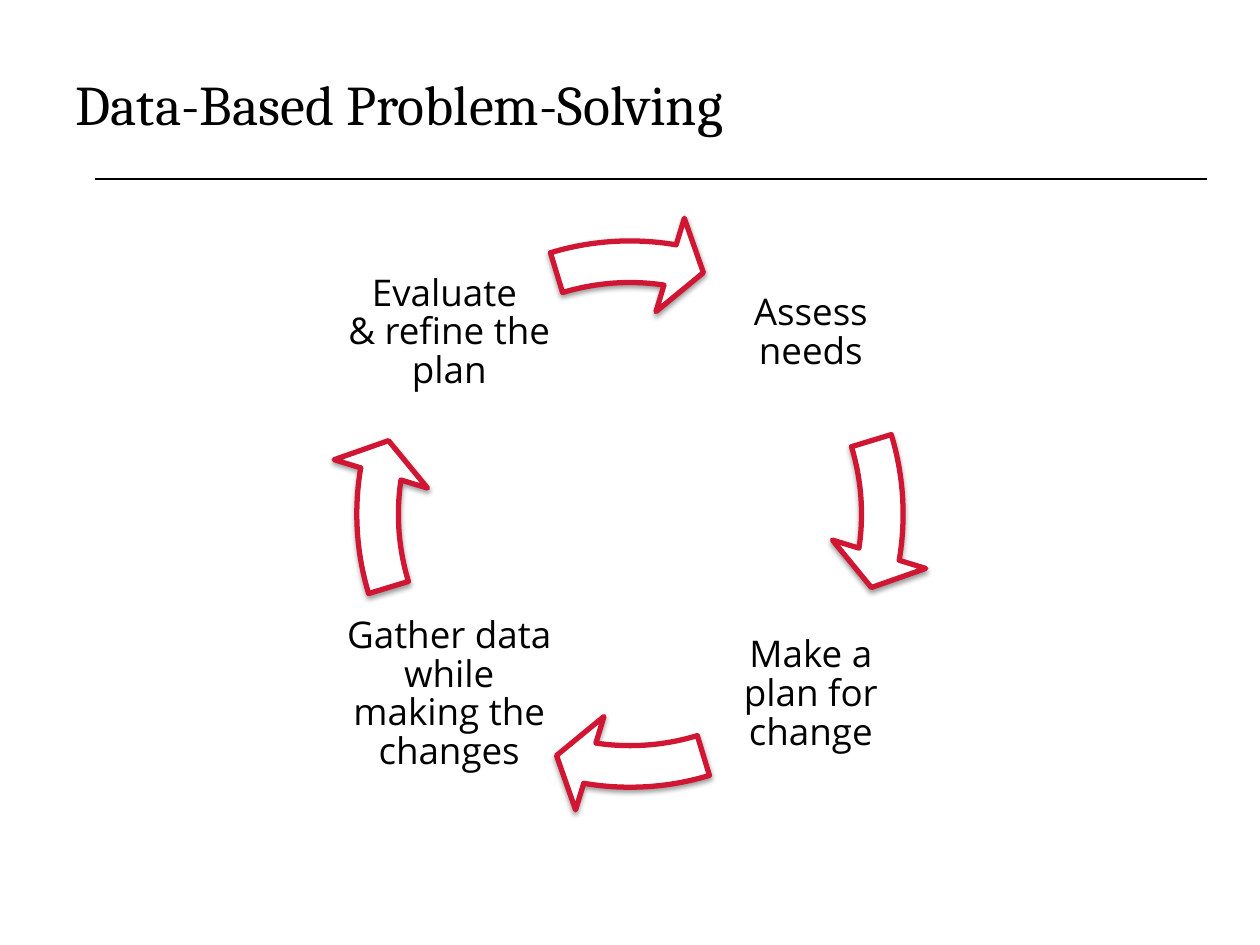
import pptx
import pptx.util
import pptx.dml.color
import pptx.enum.shapes
import pptx.enum.text
import lxml.etree
from pptx.oxml import parse_xml
from pptx.oxml.ns import nsdecls

BLACK = pptx.dml.color.RGBColor(0x00, 0x00, 0x00)
WHITE = pptx.dml.color.RGBColor(0xFF, 0xFF, 0xFF)
RED = pptx.dml.color.RGBColor(0xD0, 0x16, 0x32)
ALIGN = pptx.enum.text.PP_ALIGN
MIDDLE = pptx.enum.text.MSO_ANCHOR.MIDDLE

# The grid has 100 columns and 75 rows
COLS, ROWS = 100, 75

SHADOW = (
    f'<a:effectLst {nsdecls("a")}>'
    '<a:outerShdw blurRad="39370" dist="20320" dir="5400000" rotWithShape="0">'
    '<a:srgbClr val="000000"><a:alpha val="38000"/></a:srgbClr>'
    '</a:outerShdw></a:effectLst>'
)


def write(frame, text, font="Open Sans", size=21, color=BLACK,
          align=ALIGN.CENTER, inset=0.03, space=None):
    """Fill a text frame, one paragraph per line of text."""
    frame.word_wrap = True
    frame.vertical_anchor = MIDDLE
    frame.margin_left = frame.margin_right = pptx.util.Inches(inset)
    frame.margin_top = frame.margin_bottom = pptx.util.Inches(min(inset, 0.05))
    for i, line in enumerate(text.split("\n")):
        para = frame.paragraphs[0] if i == 0 else frame.add_paragraph()
        para.alignment = align
        para.space_before = pptx.util.Pt(0)
        para.line_spacing = space
        run = para.add_run()
        run.text = line
        run.font.name = font
        run.font.size = pptx.util.Pt(size)
        run.font.color.rgb = color


class Page:
    def __init__(self, deck):
        self.slide = deck.slides.add_slide(deck.slide_layouts[5])
        self.shapes = self.slide.shapes
        self.col = deck.slide_width / COLS
        self.row = deck.slide_height / ROWS

    def place(self, x, y, w, h):
        return (round(x * self.col), round(y * self.row),
                round(w * self.col), round(h * self.row))

    def title(self, text, *box):
        head = self.shapes.title
        head.left, head.top, head.width, head.height = self.place(*box)
        write(head.text_frame, text, font="Cambria", size=32,
              align=ALIGN.LEFT, inset=0.1)

    def rule(self, x, y, w):
        left, top, wide, _ = self.place(x, y, w, 0)
        line = self.shapes.add_connector(
            pptx.enum.shapes.MSO_CONNECTOR.STRAIGHT, left, top, left + wide, top)
        line.line.color.rgb = BLACK
        line.line.width = pptx.util.Pt(0.75)
        line._element.spPr.append(parse_xml(f'<a:effectLst {nsdecls("a")}/>'))

    def label(self, text, x, y, side):
        box = self.shapes.add_textbox(
            *self.place(x - side / 2, y - side / 2, side, side))
        write(box.text_frame, text, space=0.88)

    def arrow(self, x, y, side, turn):
        """Draw a curved arrow, moved on by a number of quarter turns."""
        arc = self.shapes.add_shape(
            pptx.enum.shapes.MSO_SHAPE.CIRCULAR_ARROW,
            *self.place(x - side / 2, y - side / 2, side, side))
        # Angles count 216 to the full circle
        tip = (5.495 + 54 * turn) % 216
        tail = (205.852 + 54 * turn) % 216
        for i, value in enumerate((0.069, 4.653, tip, tail, 0.081)):
            arc.adjustments[i] = value
        arc.fill.solid()
        arc.fill.fore_color.rgb = WHITE
        arc.line.color.rgb = RED
        arc.line.width = pptx.util.Pt(3)
        arc._element.spPr.append(parse_xml(SHADOW))


def main():
    deck = pptx.Presentation()
    deck.slide_width = pptx.util.Inches(10)
    deck.slide_height = pptx.util.Inches(7.5)
    page = Page(deck)

    # Heading
    page.title("Data-Based Problem-Solving", 5, 5, 91.7, 6.3)
    page.rule(7.5, 14.2, 88.3)

    # Cycle of four steps, clockwise from top right
    mid_x, mid_y, reach = 50, 40.8, 14.35
    steps = (
        ("Assess\nneeds", 1, -1),
        ("Make a\nplan for\nchange", 1, 1),
        ("Gather data while\nmaking the\nchanges", -1, 1),
        ("Evaluate \n& refine the plan", -1, -1),
    )
    for turn, (text, dx, dy) in enumerate(steps):
        page.label(text, mid_x + dx * reach, mid_y + dy * reach, 16.9)
        page.arrow(mid_x, mid_y, 47.8, turn)

    deck.save("out.pptx")


if __name__ == "__main__":
    main()
